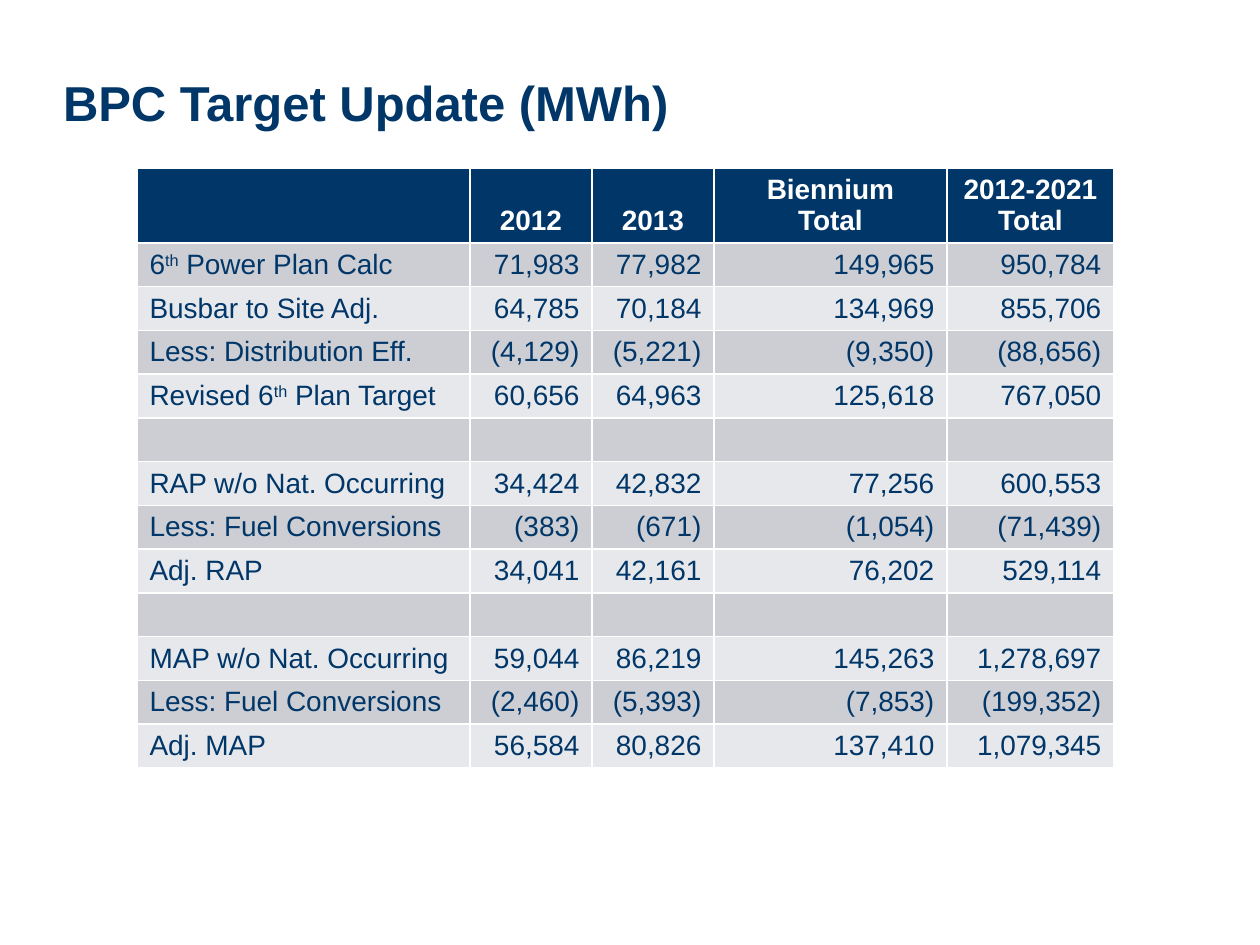
from dataclasses import dataclass

from pptx import Presentation, util as u
from pptx.dml.color import RGBColor
from pptx.enum import text

PX = u.Inches(1) / 126
NAVY = RGBColor(0x01, 0x36, 0x68)
WHITE = RGBColor(0xFF, 0xFF, 0xFF)
BANDS = (RGBColor(0xCC, 0xCE, 0xD4), RGBColor(0xE7, 0xE8, 0xEB))
FONT = "Arial"
LEFT, CENTER, RIGHT = text.PP_ALIGN.LEFT, text.PP_ALIGN.CENTER, text.PP_ALIGN.RIGHT

COL_WIDTHS = (333, 122, 122, 233, 167)
HEADER_H, ROW_H = 74, 43


@dataclass
class Row:
    label: str = ""
    values: tuple[str, ...] = ("",) * 4


HEADER = Row("", ("2012", "2013", "Biennium\nTotal", "2012-2021\nTotal"))
# A caret pair encloses superscript text
ROWS = (
    Row("6^th^ Power Plan Calc", ("71,983", "77,982", "149,965", "950,784")),
    Row("Busbar to Site Adj.", ("64,785", "70,184", "134,969", "855,706")),
    Row("Less: Distribution Eff.", ("(4,129)", "(5,221)", "(9,350)", "(88,656)")),
    Row("Revised 6^th^ Plan Target", ("60,656", "64,963", "125,618", "767,050")),
    Row(),
    Row("RAP w/o Nat. Occurring", ("34,424", "42,832", "77,256", "600,553")),
    Row("Less: Fuel Conversions", ("(383)", "(671)", "(1,054)", "(71,439)")),
    Row("Adj. RAP", ("34,041", "42,161", "76,202", "529,114")),
    Row(),
    Row("MAP w/o Nat. Occurring", ("59,044", "86,219", "145,263", "1,278,697")),
    Row("Less: Fuel Conversions", ("(2,460)", "(5,393)", "(7,853)", "(199,352)")),
    Row("Adj. MAP", ("56,584", "80,826", "137,410", "1,079,345")),
)


def px(n: int) -> int:
    return u.Emu(round(n * PX))


def style(p, size: int, color: RGBColor, bold: bool, align) -> None:
    p.alignment = align
    f = p.font
    f.name, f.size, f.bold = FONT, u.Pt(size), bold
    f.color.rgb = color


def fill_cell(cell, content: str, fill: RGBColor, color: RGBColor, bold: bool, align) -> None:
    cell.fill.solid()
    cell.fill.fore_color.rgb = fill
    cell.vertical_anchor = text.MSO_ANCHOR.BOTTOM
    tf = cell.text_frame
    for i, line in enumerate(content.split("\n")):
        p = tf.add_paragraph() if i else tf.paragraphs[0]
        style(p, 16, color, bold, align)
        for j, part in enumerate(line.split("^")):
            if part:
                r = p.add_run()
                r.text = part
                if j % 2:
                    r._r.get_or_add_rPr().set("baseline", "30000")


def fill_row(table, index: int, row: Row) -> None:
    header = index == 0
    fill = NAVY if header else BANDS[(index - 1) % 2]
    for c, content in enumerate((row.label, *row.values)):
        align = CENTER if header else RIGHT if c else LEFT
        fill_cell(table.cell(index, c), content, fill, WHITE if header else NAVY, header, align)
    table.rows[index].height = px(HEADER_H if header else ROW_H)


def main() -> None:
    prs = Presentation()
    prs.slide_width, prs.slide_height = u.Inches(10), u.Inches(7.5)
    s = prs.slides.add_slide(prs.slide_layouts[5])

    # Title
    sp = s.shapes.title
    sp.left, sp.top, sp.width, sp.height = px(63), px(21), px(1134), px(110)
    tf = sp.text_frame
    tf.text = "BPC Target Update (MWh)"
    tf.auto_size = text.MSO_AUTO_SIZE.NONE
    tf.vertical_anchor = text.MSO_ANCHOR.BOTTOM
    tf.margin_left = tf.margin_top = tf.margin_right = tf.margin_bottom = 0
    p = tf.paragraphs[0]
    style(p, 28, NAVY, True, LEFT)
    p.line_spacing = u.Pt(27)

    # Target table; white rules come from the default table style
    height = HEADER_H + ROW_H * len(ROWS)
    table = s.shapes.add_table(len(ROWS) + 1, len(COL_WIDTHS), px(137), px(168),
                               px(sum(COL_WIDTHS)), px(height)).table
    for col, width in zip(table.columns, COL_WIDTHS):
        col.width = px(width)
    for i, row in enumerate((HEADER, *ROWS)):
        fill_row(table, i, row)

    prs.save("out.pptx")


if __name__ == "__main__":
    main()
